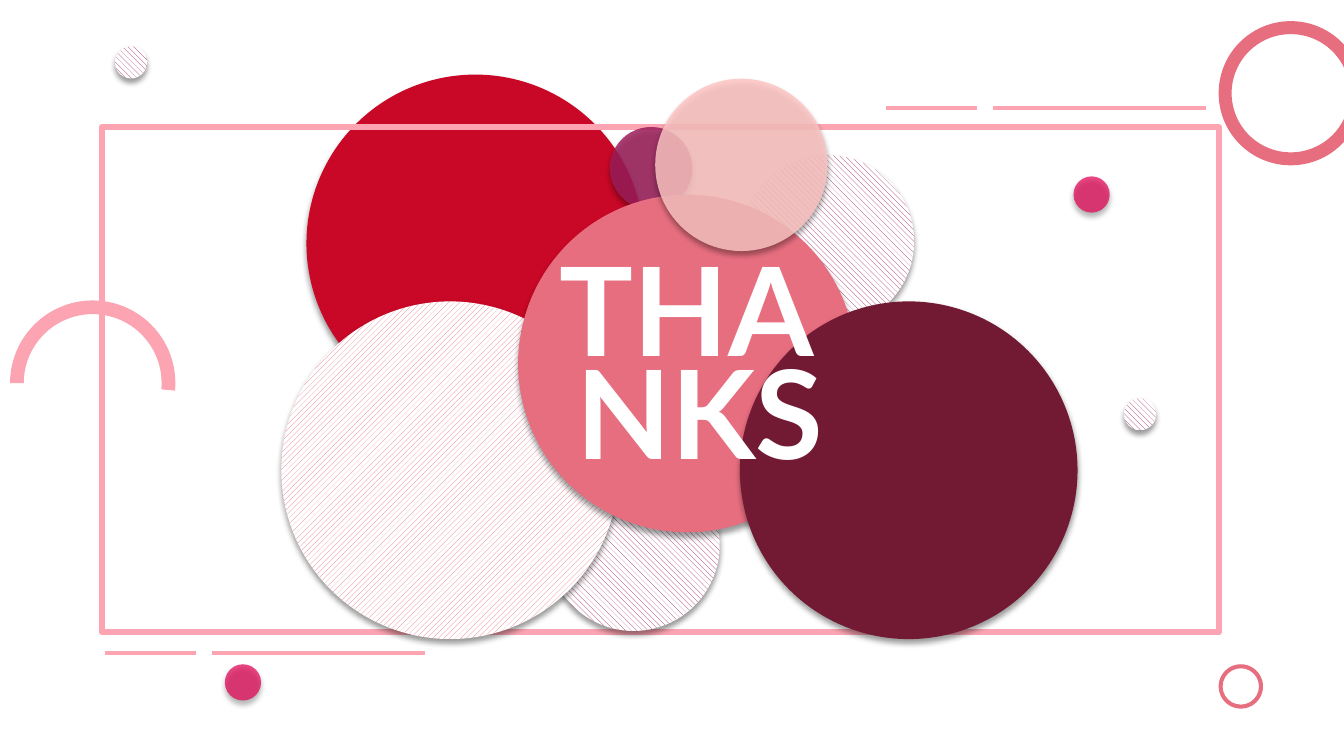
from lxml.etree import SubElement
from pptx import Presentation
from pptx.dml.color import RGBColor
from pptx.enum.dml import MSO_PATTERN
from pptx.enum.shapes import MSO_CONNECTOR, MSO_SHAPE
from pptx.enum.text import MSO_ANCHOR, MSO_AUTO_SIZE, PP_ALIGN
from pptx.oxml import parse_xml
from pptx.oxml.ns import nsdecls, qn
from pptx.util import Pt

WHITE = RGBColor(0xFF, 0xFF, 0xFF)
RED = RGBColor(0xC9, 0x07, 0x26)
PINK = RGBColor(0xFC, 0xA4, 0xB2)
CORAL = RGBColor(0xE7, 0x6E, 0x7F)
PLUM = RGBColor(0x9C, 0x1D, 0x5A)
BLUSH = RGBColor(0xFE, 0xC4, 0xC3)
MAGENTA = RGBColor(0xE4, 0x00, 0x52)
WINE = RGBColor(0x72, 0x1A, 0x34)
DOWN = MSO_PATTERN.WIDE_DOWNWARD_DIAGONAL
UP = MSO_PATTERN.WIDE_UPWARD_DIAGONAL
LARGE, MEDIUM, SMALL, HATCH_DOT, DOT = 241.2, 123.1, 59, 23, 25.9
SHADOW = (
    f'<a:effectLst {nsdecls("a")}><a:outerShdw blurRad="{Pt(4)}" dist="{Pt(3)}" '
    'dir="5400000" algn="t" rotWithShape="0"><a:srgbClr val="000000">'
    '<a:alpha val="40000"/></a:srgbClr></a:outerShdw></a:effectLst>'
)


def write(tf, text, size=88, font="Lato", color=WHITE, bold=True, align=PP_ALIGN.CENTER):
    """Write one formatted paragraph into a text frame."""
    tf.word_wrap = True
    tf.auto_size = MSO_AUTO_SIZE.SHAPE_TO_FIT_TEXT
    tf.vertical_anchor = MSO_ANCHOR.TOP
    p = tf.paragraphs[0]
    p.alignment = align
    r = p.add_run()
    r.text = text
    r.font.size, r.font.name, r.font.bold = Pt(size), font, bold
    r.font.color.rgb = color


class Deck:
    """Hold the current slide and draw its elements, with lengths in points."""

    def __init__(self, s):
        """Keep the slide to draw on."""
        self.s = s

    def shape(self, kind, x, y, w, h, color, adjust=()):
        """Add a plain filled preset shape."""
        sp = self.s.shapes.add_shape(kind, Pt(x), Pt(y), Pt(w), Pt(h))
        sp.shadow.inherit = False
        sp.fill.solid()
        sp.fill.fore_color.rgb = color
        sp.line.fill.background()
        for i, value in enumerate(adjust):
            sp.adjustments[i] = value
        return sp

    def circle(self, x, y, size, color, alpha=None, pattern=None):
        """Add a shadowed circle with a solid, translucent or hatched fill."""
        sp = self.shape(MSO_SHAPE.OVAL, x, y, size, size, color)
        if pattern:
            sp.fill.patterned()
            sp.fill.pattern = pattern
            sp.fill.fore_color.rgb = color
            sp.fill.back_color.rgb = WHITE
        if alpha:
            clr = sp._element.spPr.find(qn("a:solidFill"))[0]
            SubElement(clr, qn("a:alpha")).set("val", str(alpha * 1000))
        effects = sp._element.spPr.find(qn("a:effectLst"))
        effects.getparent().replace(effects, parse_xml(SHADOW))

    def frame(self, x, y, w, h, color, width):
        """Add an unfilled rectangle with an outline."""
        sp = self.shape(MSO_SHAPE.RECTANGLE, x, y, w, h, color)
        sp.fill.background()
        sp.line.color.rgb = color
        sp.line.width = Pt(width)

    def ring(self, x, y, size):
        """Add a coral ring."""
        self.shape(MSO_SHAPE.DONUT, x, y, size, size, CORAL, (0.09,))

    def dashes(self, x, y):
        """Add a short and a long rule side by side."""
        for start, end in ((76.2, 228.4), (0, 64.8)):
            c = self.s.shapes.add_connector(
                MSO_CONNECTOR.STRAIGHT, Pt(x + start), Pt(y), Pt(x + end), Pt(y))
            c.line.color.rgb = PINK
            c.line.width = Pt(3)
            SubElement(c._element.spPr, qn("a:effectLst"))

    def text(self, text, x, y, w, h):
        """Add a text box."""
        sp = self.s.shapes.add_textbox(Pt(x), Pt(y), Pt(w), Pt(h))
        write(sp.text_frame, text)

    def title(self, text, x, y, w, h):
        """Place the title in front of everything else."""
        sp = self.s.shapes.title
        sp.left, sp.top, sp.width, sp.height = Pt(x), Pt(y), Pt(w), Pt(h)
        write(sp.text_frame, text)
        sp._element.getparent().append(sp._element)


def main():
    """Build and save the closing slide."""
    prs = Presentation()
    prs.slide_width, prs.slide_height = Pt(960), Pt(540)
    d = Deck(prs.slides.add_slide(prs.slide_layouts[5]))

    d.circle(218.9, 53.3, LARGE, RED)
    d.frame(72.7, 90.9, 797.8, 360.7, PINK, 4.5)
    d.circle(435.6, 90.7, SMALL, PLUM, alpha=84)
    for x, y in ((529.9, 110.9), (391, 327.6)):
        d.circle(x, y, MEDIUM, PLUM, pattern=DOWN)
    d.circle(200.9, 215.3, LARGE, CORAL, pattern=UP)
    d.circle(370.1, 139, LARGE, CORAL)
    d.circle(468, 56.2, MEDIUM, BLUSH, alpha=84)

    d.shape(MSO_SHAPE.BLOCK_ARC, 7.2, 214.6, 118.1, 118.1, PINK, (108, 3.143, 0.083))
    d.ring(870.5, 15.1, 103)
    d.ring(870.5, 474.5, 31.7)
    for x, y in ((82.1, 33.1), (802.8, 284.4)):
        d.circle(x, y, HATCH_DOT, PLUM, pattern=DOWN)
    for x, y in ((766.8, 126), (160.6, 474.5)):
        d.circle(x, y, DOT, MAGENTA, alpha=71)
    for x, y in ((632.9, 77), (74.9, 466.6)):
        d.dashes(x, y)

    d.circle(528.5, 215.3, LARGE, WINE)
    d.text("NKS", 259.9, 236.9, 480.2, 113.8)
    d.title("THA", 356.4, 163.4, 268.6, 113.8)
    prs.save("out.pptx")


if __name__ == "__main__":
    main()
